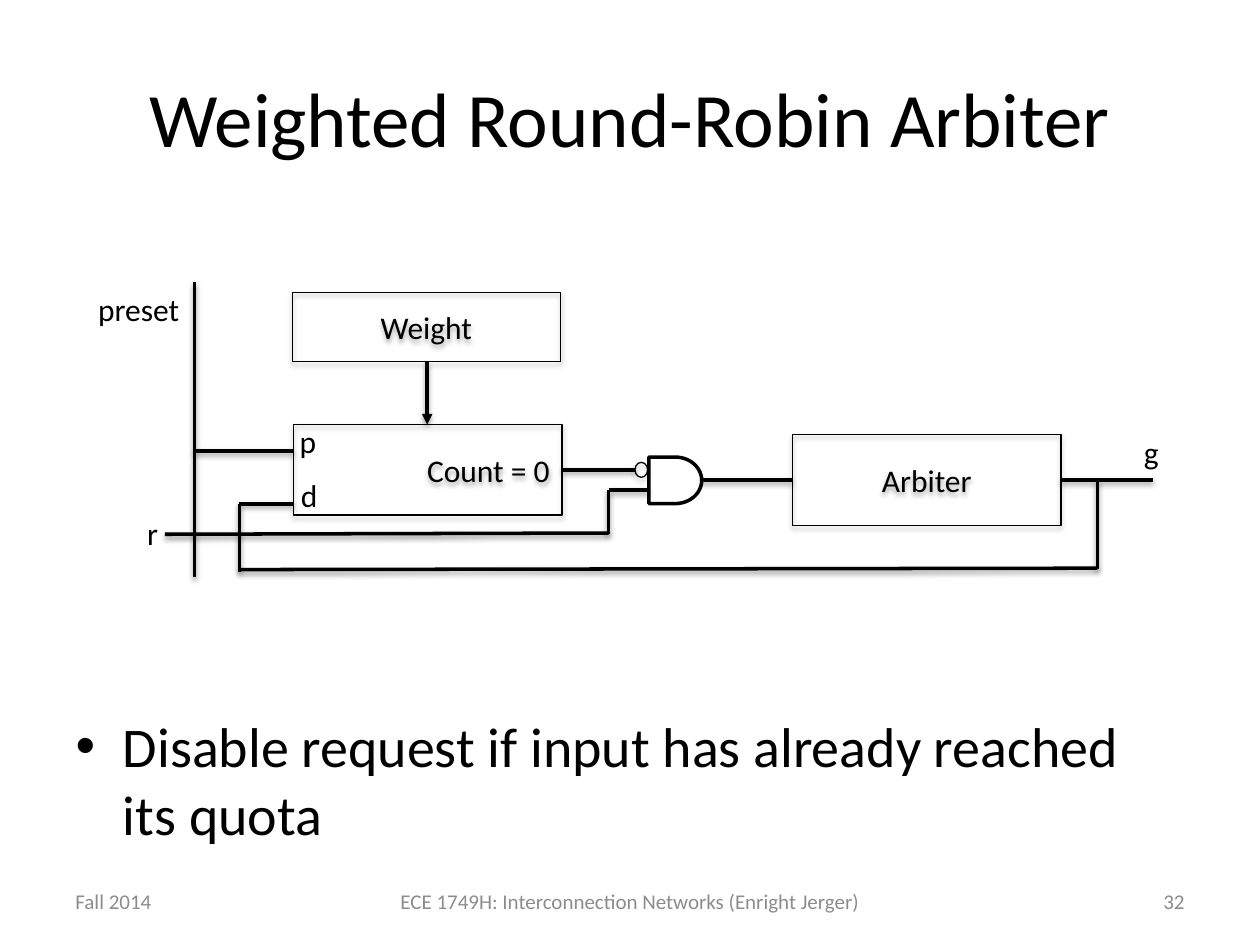
from lxml.etree import SubElement
from pptx import Presentation
from pptx.dml.color import RGBColor
from pptx.enum.shapes import MSO_CONNECTOR, MSO_SHAPE
from pptx.enum.text import MSO_ANCHOR, MSO_AUTO_SIZE, PP_ALIGN
from pptx.oxml.ns import qn
from pptx.util import Pt

BLACK = RGBColor(0x00, 0x00, 0x00)
GRAY = RGBColor(0x8C, 0x8C, 0x8C)
FONT = "Calibri"

BOX_W = 153.4
GRANT_Y = 274.4
COUNT_Y = 268.6
GATE_IN_Y = 280.1
DECREMENT_Y = 288
REQUEST_Y = 305
FEEDBACK_Y = 325

BLOCKS = [
    ("Weight", 167, 167, 39.6, PP_ALIGN.CENTER),
    ("Count = 0", 167.8, 242.6, 51.8, PP_ALIGN.RIGHT),
    ("Arbiter", 452.9, 248.4, 51.8, PP_ALIGN.CENTER),
]
WIRES = [
    (362.9, COUNT_Y, 321.2, COUNT_Y),
    (452.9, GRANT_Y, 400.5, GRANT_Y),
    (658.8, GRANT_Y, 606.3, GRANT_Y),
    (627.1, 325.4, 627.1, 275),
    (627.1, 324.7, 136.1, 325.5),
    (136.8, 326.9, 136.8, DECREMENT_Y),
    (167.8, DECREMENT_Y, 136.8, DECREMENT_Y),
    (167.8, 257.8, 110.9, 257.8),
    (370.8, GATE_IN_Y, 347.8, GATE_IN_Y),
    (347.8, 305.3, 347.8, GATE_IN_Y),
    (347.8, 304.6, 94.3, 305.3),
    (111.2, 329.8, 111.2, 161.3),
]
PIN_LABELS = [
    ("p", 164.2, 237.6, 23.8),
    ("d", 164.9, 268.6, 23.8),
    ("r", 77, 290.2, 20.9),
    ("preset", 49, 162, 61.9),
    ("g", 646.6, 244.1, 23),
]
FOOTERS = [
    ("Fall 2014", 36, 168, PP_ALIGN.LEFT),
    ("ECE 1749H: Interconnection Networks (Enright Jerger)", 204, 312, PP_ALIGN.CENTER),
    ("32", 516, 168, PP_ALIGN.RIGHT),
]


def write(tf, text, size, color=BLACK, align=None):
    p = tf.paragraphs[0]
    p.alignment = align
    r = p.add_run()
    r.text = text
    r.font.name = FONT
    r.font.size = Pt(size)
    r.font.color.rgb = color


def fill_placeholder(sp, text, size, top, height, align=None):
    sp.left, sp.top, sp.width, sp.height = Pt(36), Pt(top), Pt(648), Pt(height)
    sp.text_frame.auto_size = MSO_AUTO_SIZE.NONE
    write(sp.text_frame, text, size, align=align)


def add_shadow(effects, distance, opacity):
    shadow = SubElement(effects, qn("a:outerShdw"), blurRad=str(Pt(3.1)),
                        dist=str(Pt(distance)), dir="5400000", rotWithShape="0")
    color = SubElement(shadow, qn("a:srgbClr"), val=str(BLACK))
    SubElement(color, qn("a:alpha"), val=str(opacity * 1000))


def add_outline(s, kind, x, y, w, h, weight=0.75, shadow=True):
    """Add an unfilled preset shape with a black line."""
    sp = s.shapes.add_shape(kind, Pt(x), Pt(y), Pt(w), Pt(h))
    sp.fill.background()
    sp.line.color.rgb = BLACK
    sp.line.width = Pt(weight)
    sp.shadow.inherit = False
    if shadow:
        add_shadow(sp._element.spPr.find(qn("a:effectLst")), 1.8, 35)
    return sp


def add_block(s, text, x, y, h, align):
    tf = add_outline(s, MSO_SHAPE.RECTANGLE, x, y, BOX_W, h).text_frame
    tf.vertical_anchor = MSO_ANCHOR.MIDDLE
    write(tf, text, 18, align=align)


def add_wire(s, x1, y1, x2, y2, arrow=False):
    """Add a line; the arrowhead, if any, sits at its first point."""
    cx = s.shapes.add_connector(MSO_CONNECTOR.STRAIGHT, Pt(x1), Pt(y1), Pt(x2), Pt(y2))
    cx.line.color.rgb = BLACK
    cx.line.width = Pt(2)
    spPr = cx._element.spPr
    if arrow:
        SubElement(spPr.find(qn("a:ln")), qn("a:headEnd"), type="triangle")
    add_shadow(SubElement(spPr, qn("a:effectLst")), 1.6, 38)


def add_text(s, x, y, w, h):
    return s.shapes.add_textbox(Pt(x), Pt(y), Pt(w), Pt(h)).text_frame


def add_pin_label(s, text, x, y, w):
    tf = add_text(s, x, y, w, 29)
    tf.word_wrap = False
    tf.auto_size = MSO_AUTO_SIZE.SHAPE_TO_FIT_TEXT
    write(tf, text, 18)


def add_footer(s, text, x, w, align):
    tf = add_text(s, x, 500.5, w, 28.8)
    tf.word_wrap = True
    tf.vertical_anchor = MSO_ANCHOR.MIDDLE
    write(tf, text, 12, GRAY, align)


def main():
    prs = Presentation()
    prs.slide_width, prs.slide_height = Pt(720), Pt(540)
    s = prs.slides.add_slide(prs.slide_layouts[1])
    fill_placeholder(s.shapes.title, "Weighted Round-Robin Arbiter",
                     44, 21.6, 90, PP_ALIGN.CENTER)
    fill_placeholder(s.placeholders[1],
                     "Disable request if input has already reached its quota",
                     32, 403.2, 79.2)
    for footer in FOOTERS:
        add_footer(s, *footer)
    for block in BLOCKS:
        add_block(s, *block)
    add_outline(s, MSO_SHAPE.FLOWCHART_DELAY, 370.8, 261.2, 30.2, 26.6, 2, shadow=False)
    add_outline(s, MSO_SHAPE.OVAL, 362.9, 264.2, 7.2, 8.6)
    for wire in WIRES:
        add_wire(s, *wire)
    for label in PIN_LABELS:
        add_pin_label(s, *label)
    add_wire(s, 244.1, 242.6, 244.1, 206.6, arrow=True)
    prs.save("out.pptx")


if __name__ == "__main__":
    main()
